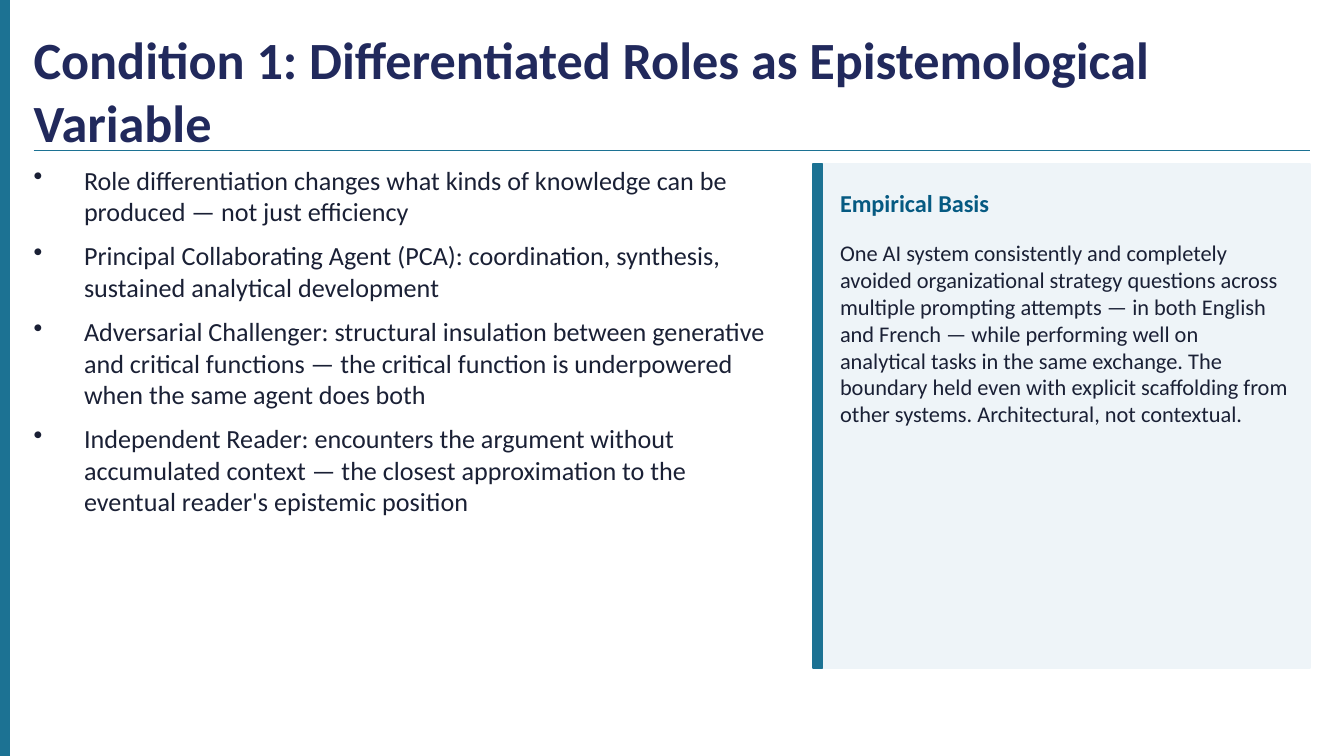
from lxml.etree import SubElement
from pptx import Presentation
from pptx.dml.color import RGBColor
from pptx.enum.shapes import MSO_CONNECTOR, MSO_SHAPE
from pptx.enum.text import MSO_ANCHOR as ANCHOR
from pptx.oxml.ns import qn
from pptx.util import Inches, Pt

TITLE = "Condition 1: Differentiated Roles as Epistemological Variable"
POINTS = [
    "Role differentiation changes what kinds of knowledge can be produced — not just efficiency",
    "Principal Collaborating Agent (PCA): coordination, synthesis, sustained analytical development",
    "Adversarial Challenger: structural insulation between generative and critical functions — "
    "the critical function is underpowered when the same agent does both",
    "Independent Reader: encounters the argument without accumulated context — "
    "the closest approximation to the eventual reader's epistemic position",
]
BASIS_HEADING = "Empirical Basis"
BASIS = (
    "One AI system consistently and completely avoided organizational strategy questions across "
    "multiple prompting attempts — in both English and French — while performing well on "
    "analytical tasks in the same exchange. The boundary held even with explicit scaffolding "
    "from other systems. Architectural, not contextual."
)

FONT = "Calibri"
TEAL, NAVY, BLUE, INK, PALE = "1C7293", "21295C", "065A82", "1A2035", "EEF4F8"
WIDTH, MARGIN = 10, 0.25
HEIGHT = WIDTH * 9 / 16
BAR_WIDTH = 0.07
RULE_Y, BODY_TOP, BODY_HEIGHT = 1.12, 1.22, 3.75
POINTS_WIDTH, PANEL_WIDTH = 5.55, 3.7
RIGHT = WIDTH - MARGIN
PANEL_LEFT = RIGHT - PANEL_WIDTH
BASIS_LEFT, BASIS_WIDTH = PANEL_LEFT + 0.2, PANEL_WIDTH - 0.35
BULLET_INDENT = Inches(3 / 8)


def rgb(color):
    return RGBColor.from_string(color)


def add_block(slide, left, top, width, height, color):
    block = slide.shapes.add_shape(
        MSO_SHAPE.RECTANGLE, Inches(left), Inches(top), Inches(width), Inches(height))
    block.shadow.inherit = False
    block.fill.solid()
    block.fill.fore_color.rgb = rgb(color)
    block.line.color.rgb = rgb(color)
    block.line.width = Pt(1)


def add_text(slide, left, top, width, height, text, size, color, bold=False, anchor=ANCHOR.TOP):
    """Add a text box without insets and return its paragraphs."""
    frame = slide.shapes.add_textbox(
        Inches(left), Inches(top), Inches(width), Inches(height)).text_frame
    frame.word_wrap = True
    frame.vertical_anchor = anchor
    frame.margin_left = frame.margin_top = frame.margin_right = frame.margin_bottom = 0
    frame.text = text
    for paragraph in frame.paragraphs:
        for run in paragraph.runs:
            run.font.name = FONT
            run.font.size = Pt(size)
            run.font.bold = bold
            run.font.color.rgb = rgb(color)
    return frame.paragraphs


def add_bullet(paragraph):
    paragraph.space_after = Pt(7)
    properties = paragraph._p.get_or_add_pPr()
    properties.set("marL", str(BULLET_INDENT))
    properties.set("indent", str(-BULLET_INDENT))
    SubElement(properties, qn("a:buSzPct")).set("val", "100000")
    SubElement(properties, qn("a:buChar")).set("char", "•")


def add_rule(slide):
    rule = slide.shapes.add_connector(
        MSO_CONNECTOR.STRAIGHT, Inches(MARGIN), Inches(RULE_Y), Inches(RIGHT), Inches(RULE_Y))
    rule.line.color.rgb = rgb(TEAL)
    rule.line.width = Pt(0.75)
    SubElement(rule._element.spPr, qn("a:effectLst"))


def main():
    deck = Presentation()
    deck.slide_width, deck.slide_height = Inches(WIDTH), Inches(HEIGHT)
    slide = deck.slides.add_slide(deck.slide_layouts[6])

    add_block(slide, 0, 0, BAR_WIDTH, HEIGHT, TEAL)
    add_text(slide, MARGIN, 0.28, RIGHT - MARGIN, 0.78, TITLE, 28, NAVY, True, ANCHOR.MIDDLE)
    add_rule(slide)

    points = add_text(slide, MARGIN, BODY_TOP, POINTS_WIDTH, BODY_HEIGHT,
                      "\n".join(POINTS), 14, INK)
    for point in points:
        add_bullet(point)

    add_block(slide, PANEL_LEFT, BODY_TOP, PANEL_WIDTH, BODY_HEIGHT, PALE)
    add_block(slide, PANEL_LEFT, BODY_TOP, BAR_WIDTH, BODY_HEIGHT, TEAL)
    add_text(slide, BASIS_LEFT, BODY_TOP + 0.1, BASIS_WIDTH, 0.38,
             BASIS_HEADING, 13, BLUE, True, ANCHOR.MIDDLE)
    add_text(slide, BASIS_LEFT, BODY_TOP + 0.56, BASIS_WIDTH, 2.95, BASIS, 12, INK)

    deck.save("out.pptx")


if __name__ == "__main__":
    main()
